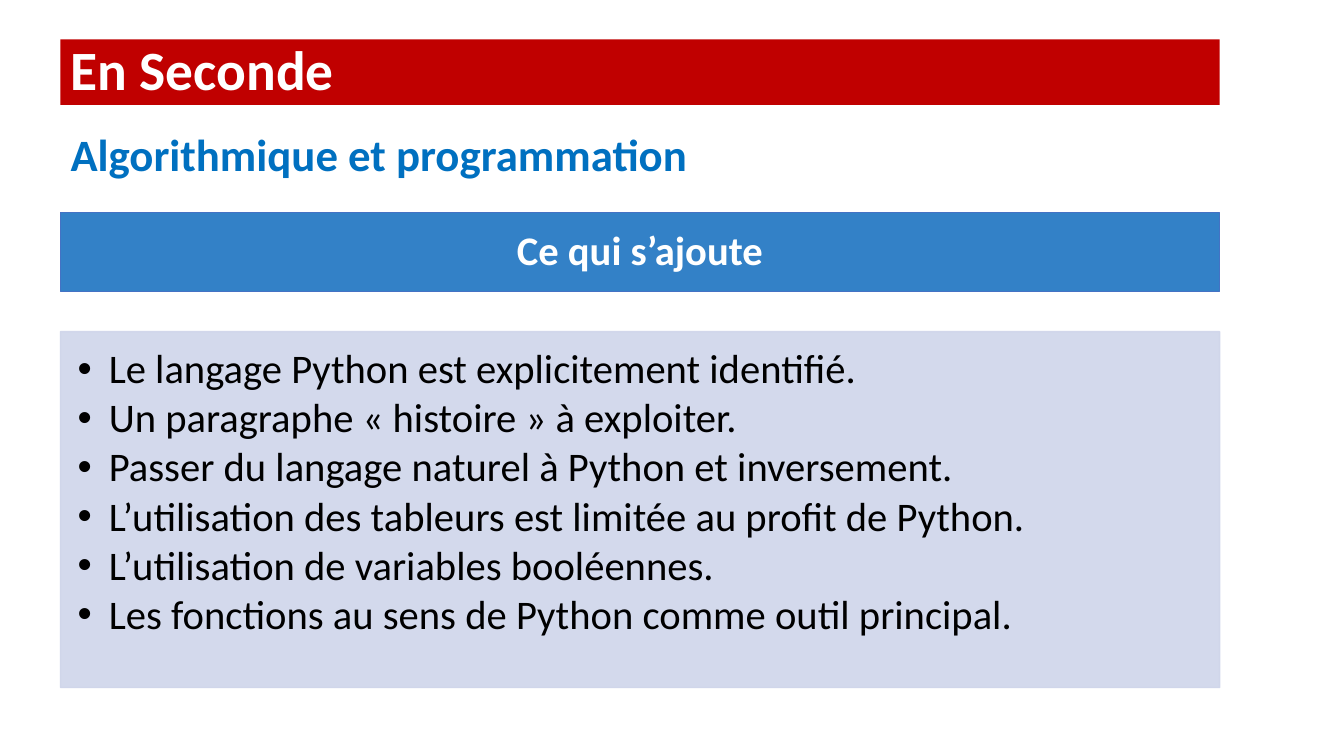
import pptx
import pptx.util
import pptx.dml.color
import pptx.enum.shapes
import pptx.enum.text
import pptx.oxml.ns
import pptx.oxml.xmlchemy

Pt = pptx.util.Pt
RGBColor = pptx.dml.color.RGBColor
ALIGN = pptx.enum.text.PP_ALIGN
ANCHOR = pptx.enum.text.MSO_ANCHOR
qn = pptx.oxml.ns.qn
make = pptx.oxml.xmlchemy.OxmlElement

RED = RGBColor(0xC0, 0x00, 0x00)
BLUE = RGBColor(0x00, 0x70, 0xC0)
SKY = RGBColor(0x33, 0x81, 0xC7)
EDGE = RGBColor(0x44, 0x72, 0xC4)
PALE = RGBColor(0xCF, 0xD5, 0xEA)
WHITE = RGBColor(0xFF, 0xFF, 0xFF)
BLACK = RGBColor(0x00, 0x00, 0x00)

LEFT, WIDTH = 43.2, 828


def assign(item, values):
    for name, value in values.items():
        setattr(item, name, value)


def fill_box(box, top, high, lines, color, font, para, frame):
    assign(box, {"left": Pt(LEFT), "top": Pt(top),
                 "width": Pt(WIDTH), "height": Pt(high)})
    text = box.text_frame
    text.text = "\n".join(lines)
    assign(text, {"word_wrap": True,
                  "auto_size": pptx.enum.text.MSO_AUTO_SIZE.NONE, **frame})
    for line in text.paragraphs:
        assign(line, {"line_spacing": 0.9, "space_before": Pt(0), **para})
        for run in line.runs:
            assign(run.font, {"name": "Calibri", **font})
            run.font.color.rgb = color


deck = pptx.Presentation()
assign(deck, {"slide_width": Pt(960), "slide_height": Pt(540)})
slide = deck.slides.add_slide(deck.slide_layouts[4])
title, topic, points, *spare = slide.placeholders
for holder in spare:
    holder.element.getparent().remove(holder.element)

# Title band
fill_box(title, 28.1, 46.8, ["En Seconde"], WHITE,
         {"size": Pt(39.6), "bold": True},
         {"alignment": ALIGN.LEFT}, {"vertical_anchor": ANCHOR.MIDDLE})
title.fill.solid()
title.fill.fore_color.rgb = RED

# Topic line
fill_box(topic, 86.4, 46.8, ["Algorithmique et programmation"], BLUE,
         {"size": Pt(32), "bold": True},
         {"space_before": Pt(10)}, {"vertical_anchor": ANCHOR.BOTTOM})

# Header bar
header = slide.shapes.add_shape(
    pptx.enum.shapes.MSO_SHAPE.RECTANGLE, 0, 0, Pt(WIDTH), Pt(56))
header.shadow.inherit = False
fill_box(header, 151.9, 56.2, ["Ce qui s’ajoute"], WHITE,
         {"size": Pt(29), "bold": True},
         {"alignment": ALIGN.CENTER}, {"vertical_anchor": ANCHOR.MIDDLE})

# List of additions
fill_box(points, 236.9, 254.2, [
    "Le langage Python est explicitement identifié.",
    "Un paragraphe « histoire » à exploiter.",
    "Passer du langage naturel à Python et inversement.",
    "L’utilisation des tableurs est limitée au profit de Python.",
    "L’utilisation de variables booléennes.",
    "Les fonctions au sens de Python comme outil principal.",
], BLACK, {"size": Pt(29)}, {"space_after": Pt(3.75)}, {
    "vertical_anchor": ANCHOR.TOP,
    "margin_left": Pt(12.2), "margin_top": Pt(12.2),
    "margin_right": Pt(16.5), "margin_bottom": Pt(18)})
for line in points.text_frame.paragraphs:
    props = line._p.get_or_add_pPr()
    props.set("marL", str(Pt(22.3)))
    props.set("indent", str(-Pt(22.3)))
    bullet = make("a:buChar")
    bullet.set("char", "•")
    props.append(bullet)

# Panel fills and outlines
for box, fill, edge in ((header, SKY, EDGE), (points, PALE, PALE)):
    box.fill.solid()
    box.fill.fore_color.rgb = fill
    box.line.color.rgb = edge
    box.line.width = Pt(1)
for tint in list(points.element.spPr.iter(qn("a:srgbClr"))):
    alpha = make("a:alpha")
    alpha.set("val", "90000")
    tint.append(alpha)

deck.save("out.pptx")
